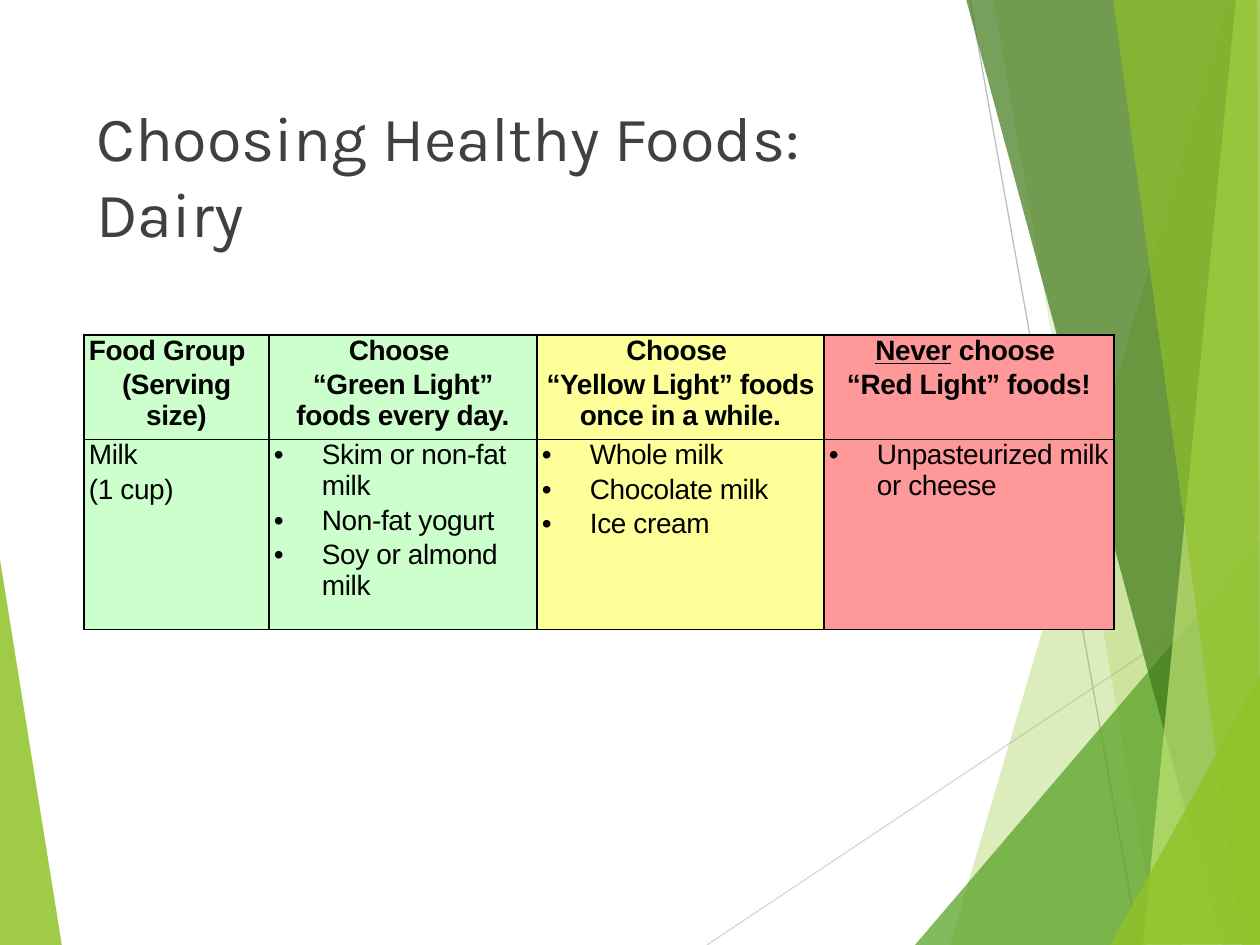
from lxml.etree import SubElement
from pptx import Presentation
from pptx.dml.color import RGBColor
from pptx.enum.shapes import MSO_CONNECTOR
from pptx.enum.text import MSO_ANCHOR, PP_ALIGN
from pptx.oxml.ns import qn
from pptx.util import Emu, Pt

LIME = RGBColor(0x90, 0xC2, 0x26)
LEAF = RGBColor(0x54, 0xA0, 0x21)
FOREST = RGBColor(0x3F, 0x78, 0x19)
PALE_LIME = RGBColor(0xC0, 0xE4, 0x74)
LIGHT_GRAY = RGBColor(0xD9, 0xD9, 0xD9)
MID_GRAY = RGBColor(0xBF, 0xBF, 0xBF)
TITLE_GRAY = RGBColor(0x40, 0x40, 0x40)
BLACK = RGBColor(0, 0, 0)
GREEN_LIGHT = RGBColor(0xCC, 0xFF, 0xCC)
YELLOW_LIGHT = RGBColor(0xFF, 0xFF, 0x99)
RED_LIGHT = RGBColor(0xFF, 0x99, 0x99)

WIDTH, HEIGHT = 1260, 945
SCALE = 914400 / 126

FACETS = [
    (LIME, 85, [(-1, 553), (62, 946), (-1, 945)]),
    (LIME, 30, [(1228, 0), (950, 945), (1262, 946), (1261, 1)]),
    (LIME, 20, [(993, -1), (1158, 945), (1261, 945), (1261, -1)]),
    (LEAF, 72, [(915, 945), (1260, 541), (1261, 945)]),
    (FOREST, 70, [(966, -1), (1222, 945), (1261, 944), (1261, -1)]),
    (PALE_LIME, 70, [(1236, -1), (1143, 945), (1261, 945), (1260, -1)]),
    (LIME, 65, [(1113, -1), (1242, 945), (1260, 945), (1257, -1)]),
    (LIME, 80, [(1110, 945), (1261, 674), (1261, 944)]),
]
RAYS = [(LIGHT_GRAY, (707, 945), (1261, 576)), (MID_GRAY, (970, 0), (1139, 945))]

COLUMNS = [185, 268, 287, 290]
ROWS = [97, 190]
LIGHTS = [GREEN_LIGHT, GREEN_LIGHT, YELLOW_LIGHT, RED_LIGHT]
HEADINGS = [
    ["Food Group", "(Serving size)"],
    ["Choose ", "“Green Light” foods every day."],
    ["Choose ", "“Yellow Light” foods once in a while."],
    ["Never choose ", "“Red Light” foods!"],
]
FOODS = [
    ["Milk", "(1 cup)"],
    ["Skim or non-fat milk", "Non-fat yogurt", "Soy or almond milk"],
    ["Whole milk", "Chocolate milk", "Ice cream"],
    ["Unpasteurized milk or cheese"],
]


def px(length):
    return Emu(round(length * SCALE))


class SlideWriter:
    """Draws styled elements on the current slide, measured in px."""

    title_font, title_size = "Karla", 36
    body_font, body_size = "Arial", 16

    def __init__(self, page):
        self.page = page

    def facet(self, color, opacity, points):
        builder = self.page.shapes.build_freeform(*points[0], scale=SCALE)
        builder.add_line_segments(points[1:], close=True)
        shape = builder.convert_to_shape()
        shape.shadow.inherit = False
        shape.fill.solid()
        shape.fill.fore_color.rgb = color
        shape.line.fill.background()
        tint = shape.fill._xPr.find(qn("a:solidFill"))[0]
        SubElement(tint, qn("a:alpha"), val=str(opacity * 1000))

    def ray(self, color, start, end):
        line = self.page.shapes.add_connector(
            MSO_CONNECTOR.STRAIGHT, *map(px, start + end))
        line.line.color.rgb = color
        line.line.width = Pt(0.75)
        SubElement(line._element.spPr, qn("a:effectLst"))

    def span(self, para, text, font, size, color, bold=False):
        run = para.add_run()
        run.text = text
        run.font.name, run.font.size = font, Pt(size)
        run.font.color.rgb = color
        run.font.bold = bold
        return run

    def title(self, lines, left, top, width, height):
        box = self.page.shapes.add_textbox(*map(px, (left, top, width, height)))
        frame = box.text_frame
        frame.word_wrap = True
        frame.vertical_anchor = MSO_ANCHOR.MIDDLE
        para = frame.paragraphs[0]
        for index, line in enumerate(lines):
            if index:
                para.add_line_break()
            self.span(para, line, self.title_font, self.title_size, TITLE_GRAY)

    def table(self, left, top, columns, rows):
        frame = self.page.shapes.add_table(
            len(rows), len(columns), px(left), px(top), px(sum(columns)), px(sum(rows)))
        table = frame.table
        table.first_row = table.horz_banding = False
        for column, width in zip(table.columns, columns):
            column.width = px(width)
        for row, height in zip(table.rows, rows):
            row.height = px(height)
        return table

    def cell(self, cell, fill):
        cell.margin_left = cell.margin_right = px(5)
        cell.margin_top = cell.margin_bottom = 0
        properties = cell._tc.get_or_add_tcPr()
        for side in ("lnL", "lnR", "lnT", "lnB"):
            border = SubElement(properties, qn(f"a:{side}"), w=str(Pt(1)))
            solid = SubElement(border, qn("a:solidFill"))
            SubElement(solid, qn("a:srgbClr"), val=str(BLACK))
        cell.fill.solid()
        cell.fill.fore_color.rgb = fill

    def paragraph(self, cell, index, spans, align=PP_ALIGN.LEFT, bold=False, bullet=False):
        frame = cell.text_frame
        para = frame.add_paragraph() if index else frame.paragraphs[0]
        para.alignment = align
        para.space_before = Pt(2)
        if bullet:
            properties = para._p.get_or_add_pPr()
            properties.set("marL", str(px(48)))
            properties.set("indent", str(px(-48)))
            SubElement(properties, qn("a:buFont"), typeface=self.body_font)
            SubElement(properties, qn("a:buChar"), char="•")
        for text in spans:
            run = self.span(para, text, self.body_font, self.body_size, BLACK, bold)
            run.font.underline = text == "Never"
            run.font._element.set("spc", "-20")


def main():
    deck = Presentation()
    deck.slide_width, deck.slide_height = px(WIDTH), px(HEIGHT)
    writer = SlideWriter(deck.slides.add_slide(deck.slide_layouts[6]))

    writer.facet(*FACETS[0])
    for ray in RAYS:
        writer.ray(*ray)
    for facet in FACETS[1:]:
        writer.facet(*facet)

    writer.title(["Choosing Healthy Foods:", "Dairy"], 84, 84, 874, 181)
    table = writer.table(84, 335, COLUMNS, ROWS)
    for column, (light, headings, foods) in enumerate(zip(LIGHTS, HEADINGS, FOODS)):
        head, body = table.cell(0, column), table.cell(1, column)
        writer.cell(head, light)
        writer.cell(body, light)
        for index, text in enumerate(headings):
            align = PP_ALIGN.JUSTIFY if text == "Food Group" else PP_ALIGN.CENTER
            before, never, after = text.partition("Never")
            spans = [part for part in (before, never, after) if part]
            writer.paragraph(head, index, spans, align, bold=True)
        for index, text in enumerate(foods):
            writer.paragraph(body, index, [text], bullet=column > 0)

    deck.save("out.pptx")


if __name__ == "__main__":
    main()
